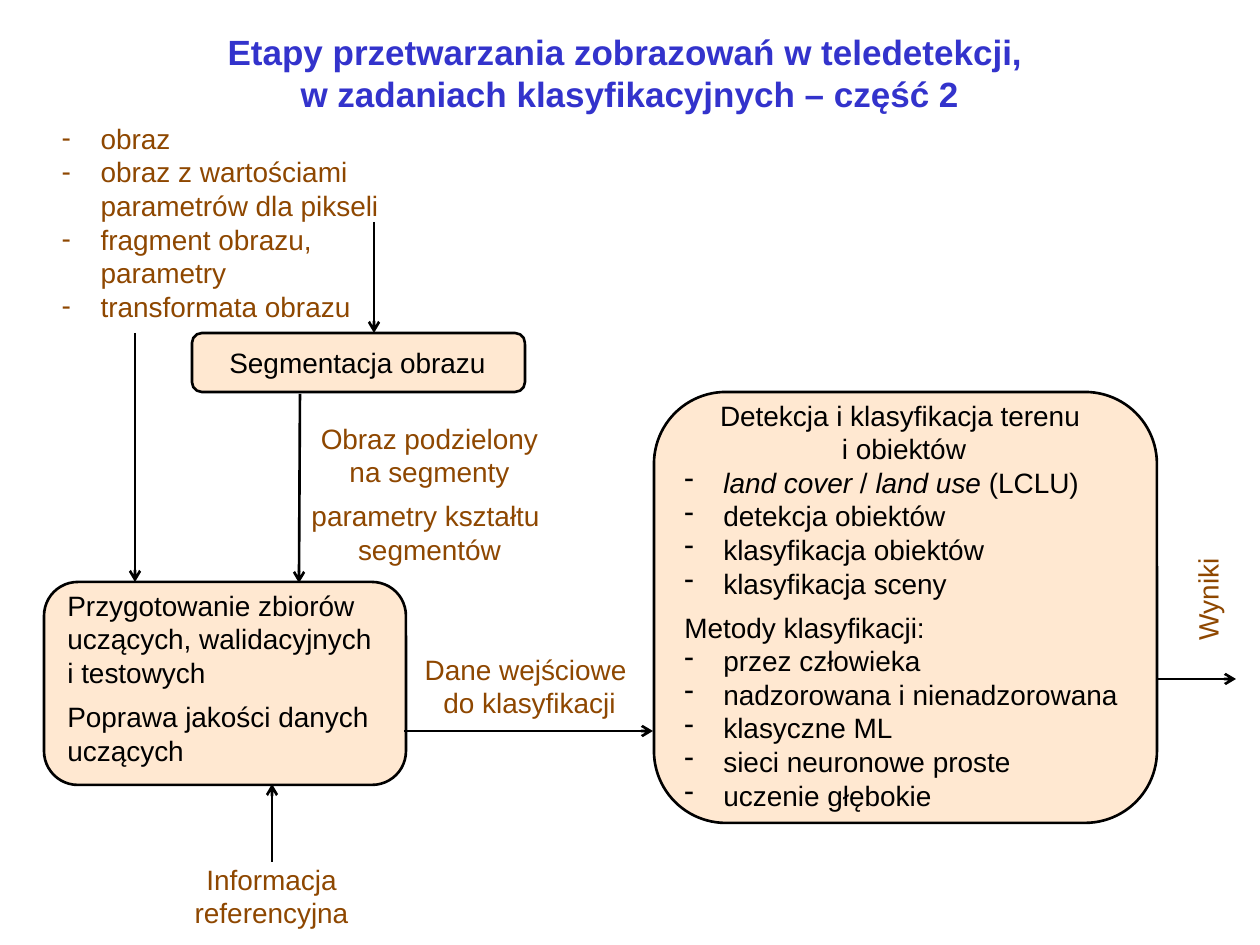
from lxml import etree
from pptx import Presentation
from pptx import util as u
from pptx.dml.color import RGBColor
from pptx.enum import shapes, text
from pptx.oxml.ns import qn

PX = u.Inches(1) / 126
BLUE = RGBColor(0x33, 0x33, 0xCC)
BROWN = RGBColor(0x8E, 0x47, 0x00)
BLACK = RGBColor(0, 0, 0)
PEACH = RGBColor(0xFF, 0xE8, 0xD1)
CENTER, LEFT = text.PP_ALIGN.CENTER, text.PP_ALIGN.LEFT
INDENT, GAP = 39, 6

# Content: "- " opens a bullet, "+ " a paragraph with a gap above,
# "^ " a centred paragraph; *...* is italic
TITLE = "Etapy przetwarzania zobrazowań w teledetekcji, \nw zadaniach klasyfikacyjnych – część 2"
TITLE_BOX = (63, 35, 1134, 74)
INPUTS = [
    "- obraz",
    "- obraz z wartościami \nparametrów dla pikseli",
    "- fragment obrazu, \nparametry",
    "- transformata obrazu",
]
INPUTS_BOX = (49, 115, 347, 217)

# Stages: frame, text area, wrapping, paragraphs
STAGES = [
    ((654, 392, 503, 431), (672, 392, 464, 431), False, [
        "^ Detekcja i klasyfikacja terenu \ni obiektów",
        "- *land cover* / *land use* (LCLU)",
        "- detekcja obiektów",
        "- klasyfikacja obiektów",
        "- klasyfikacja sceny",
        "+ Metody klasyfikacji:",
        "- przez człowieka",
        "- nadzorowana i nienadzorowana",
        "- klasyczne ML",
        "- sieci neuronowe proste",
        "- uczenie głębokie",
    ]),
    ((44, 582, 362, 203), (55, 582, 350, 193), True, [
        "Przygotowanie zbiorów uczących, walidacyjnych \ni testowych",
        "+ Poprawa jakości danych uczących",
    ]),
    ((192, 333, 333, 59), (217, 339, 285, 47), False, ["Segmentacja obrazu"]),
]

# Data labels: box, rotation, paragraphs
LABELS = [
    ((411, 646, 237, 81), 0, ["Dane wejściowe \ndo klasyfikacji"]),
    ((297, 415, 265, 159), 0,
     ["Obraz podzielony\nna segmenty", "+ parametry kształtu \nsegmentów"]),
    ((181, 856, 181, 81), 0, ["Informacja\nreferencyjna"]),
    ((1154, 576, 108, 47), 270, ["Wyniki"]),
]

# Arrows: start and end points
ARROWS = [
    (374, 222, 374, 333),
    (404, 731, 653, 731),
    (1157, 679, 1236, 679),
    (300, 394, 299, 583),
    (135, 333, 135, 582),
    (272, 862, 272, 784),
]


def emu(lengths):
    return [round(length * PX) for length in lengths]


def place(shape, box):
    shape.left, shape.top, shape.width, shape.height = emu(box)


def add_bullet(paragraph):
    properties = paragraph._p.get_or_add_pPr()
    indent, = emu([INDENT])
    properties.set("marL", str(indent))
    properties.set("indent", str(-indent))
    bullet = etree.Element(qn("a:buChar"), char="-")
    properties.insert_element_before(bullet, "a:tabLst", "a:defRPr", "a:extLst")


def write(frame, lines, color, size=16, align=LEFT, wrap=False, bold=False):
    frame.word_wrap = wrap
    frame.auto_size = text.MSO_AUTO_SIZE.NONE
    for index, line in enumerate(lines):
        paragraph = frame.add_paragraph() if index else frame.paragraphs[0]
        mark = line[0] if line[:2] in ("- ", "+ ", "^ ") else ""
        words = line[2:] if mark else line
        if "*" in words:
            for part, piece in enumerate(words.split("*")):
                if piece:
                    run = paragraph.add_run()
                    run.text = piece
                    run.font.italic = part % 2 == 1
        else:
            paragraph.text = words
        paragraph.alignment = CENTER if mark == "^" else align
        paragraph.space_before = u.Pt(GAP if mark == "+" else 0)
        font = paragraph.font
        font.name, font.size, font.bold = "Arial", u.Pt(size), bold
        font.color.rgb = color
        if mark == "-":
            add_bullet(paragraph)


def add_stage(slide, frame_box, text_box, wrap, lines):
    group = slide.shapes.add_group_shape()
    frame = group.shapes.add_shape(
        shapes.MSO_SHAPE.ROUNDED_RECTANGLE, *emu(frame_box))
    frame.shadow.inherit = False
    frame.fill.solid()
    frame.fill.fore_color.rgb = PEACH
    frame.line.color.rgb = BLACK
    frame.line.width = u.Pt(1.5)
    area = group.shapes.add_textbox(*emu(text_box))
    write(area.text_frame, lines, BLACK, wrap=wrap)


def add_arrow(slide, points):
    arrow = slide.shapes.add_connector(
        shapes.MSO_CONNECTOR.STRAIGHT, *emu(points))
    arrow.line.color.rgb = BLACK
    arrow.line.width = u.Pt(1.5)
    etree.SubElement(arrow.line._get_or_add_ln(), qn("a:tailEnd"), type="arrow")
    etree.SubElement(arrow._element.spPr, qn("a:effectLst"))


def main():
    presentation = Presentation()
    presentation.slide_width, presentation.slide_height = u.Inches(10), u.Inches(7.5)
    slide = presentation.slides.add_slide(presentation.slide_layouts[1])

    # Title and list of inputs
    title, inputs = slide.placeholders
    place(title, TITLE_BOX)
    write(title.text_frame, [TITLE], BLUE, 20, CENTER, wrap=True, bold=True)
    title.text_frame.vertical_anchor = text.MSO_ANCHOR.MIDDLE
    place(inputs, INPUTS_BOX)
    write(inputs.text_frame, INPUTS, BROWN)

    # Processing stages
    for stage in STAGES:
        add_stage(slide, *stage)

    # Data labels
    for box, rotation, lines in LABELS:
        label = slide.shapes.add_textbox(*emu(box))
        label.rotation = rotation
        write(label.text_frame, lines, BROWN, align=CENTER)

    # Flow arrows
    for points in ARROWS:
        add_arrow(slide, points)

    presentation.save("out.pptx")


if __name__ == "__main__":
    main()
